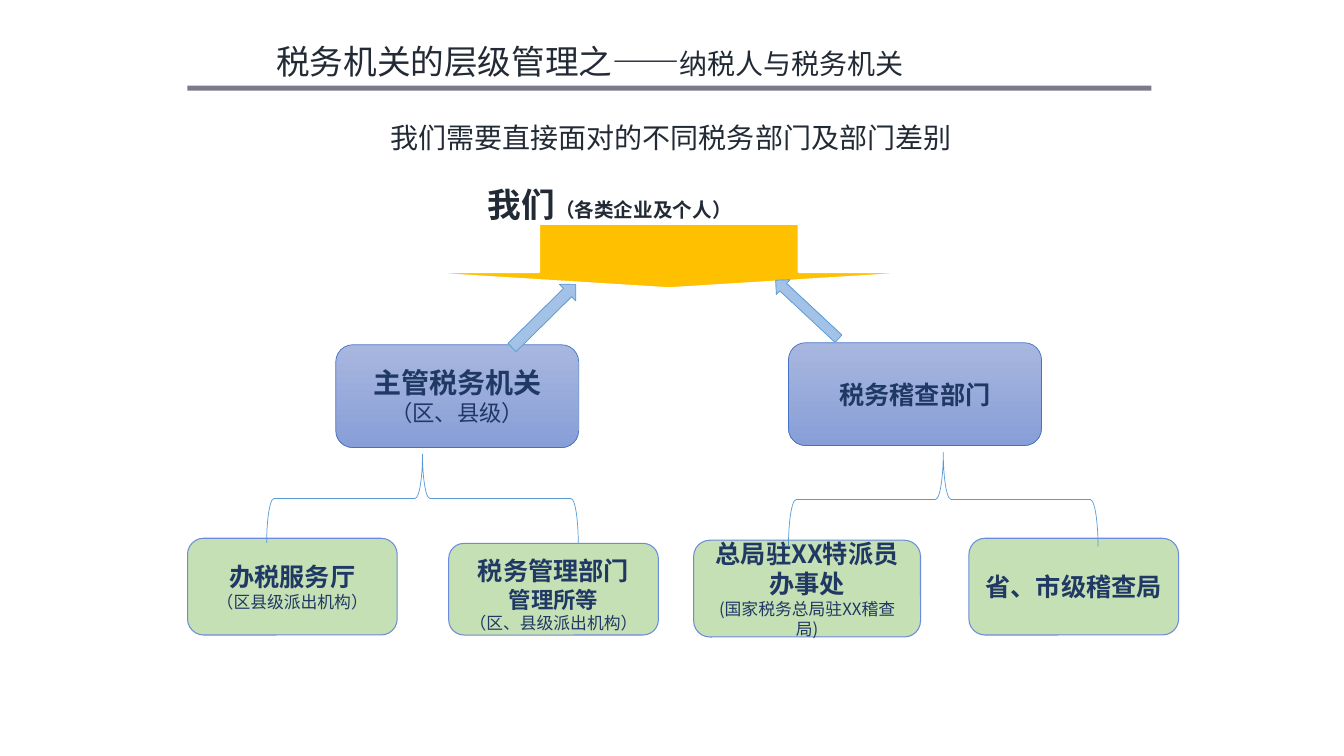
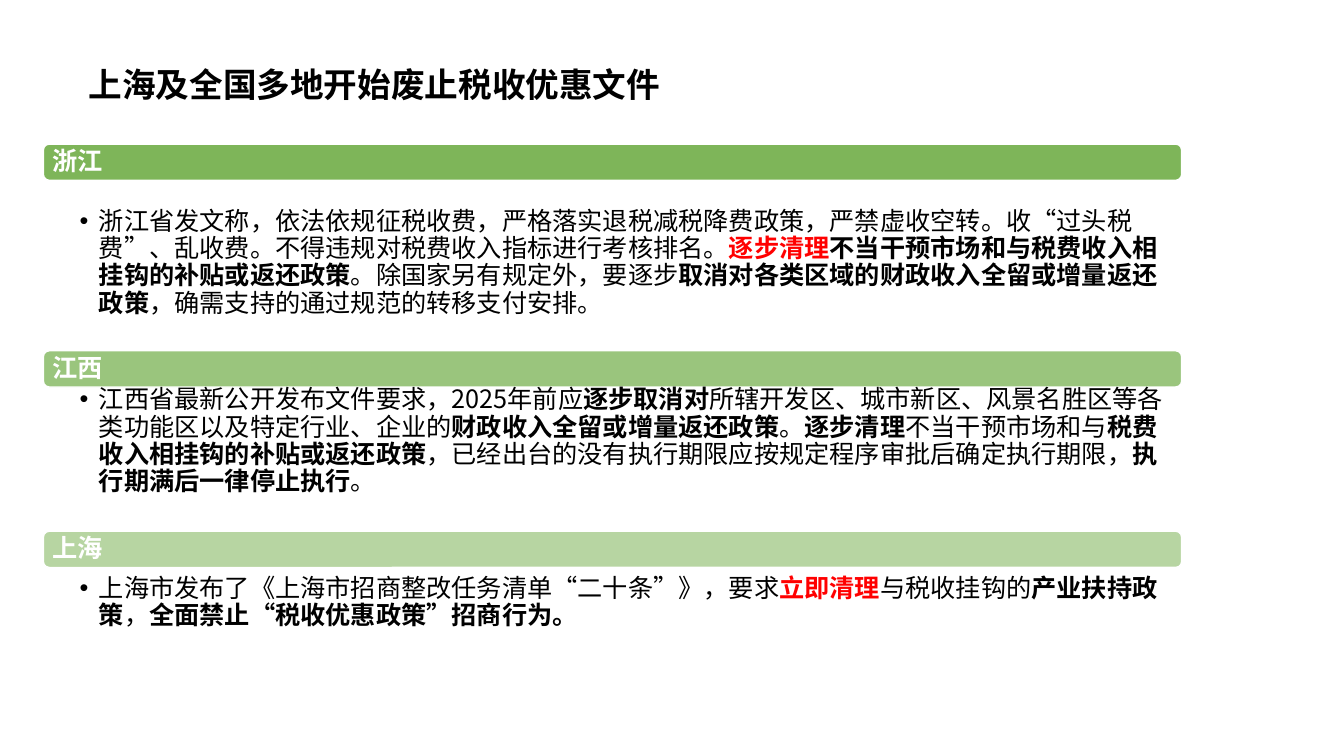
from lxml.etree import SubElement
from pptx import Presentation
from pptx.dml.color import RGBColor
from pptx.enum.shapes import MSO_SHAPE
from pptx.enum.text import MSO_ANCHOR, MSO_AUTO_SIZE, PP_ALIGN
from pptx.oxml.ns import qn
from pptx.util import Emu, Pt

# Shared look
PX = 9144  # 100 px to the inch
COLOURS = {
    "ink": "222A35", "black": "000000", "white": "FFFFFF", "alert": "FF0000",
    "navy": "203864", "rule": "7C7A88", "gold": "FFC000", "band": "70AD47",
    "office_top": "A8B7DF", "office_bottom": "889ED7", "office_line": "4472C4",
    "branch": "C5E0B4", "branch_line": "6B8BDB",
    "arrow_top": "B1CBE9", "arrow_bottom": "93B9E4", "brace": "5B9BD5",
}
FONT = "Noto Sans CJK SC"
SINGLE, REGION_SPACING = 1.0, 0.9
BOLD, ALERT = {"bold": True}, {"bold": True, "colour": "alert"}

# Slide 1: each paragraph is a list of (text, run overrides)
LEVELS_TITLE = [("税务机关的层级管理之——", {}), ("纳税人与税务机关", {"size": 20})]
LEVELS_HEADING = "我们需要直接面对的不同税务部门及部门差别"
LEVELS_US = [("我们", {"size": 24}), ("（各类企业及个人）", {"size": 14})]
# Boxes: left, top, width, height, text shift, lines of (text, size, bold)
OFFICES = [
    (333, 342, 241, 102, 0, [("主管税务机关", 20, True), ("（区、县级）", 16, False)]),
    (782, 340, 251, 102, 0, [("税务稽查部门", 18, True)]),
]
BRANCHES = [
    (186, 534, 208, 96, 0, [("办税服务厅", 18, True), ("（区县级派出机构）", 12, False)]),
    (445, 539, 208, 91, 5, [("税务管理部门", 18, True), ("管理所等", 16, True),
                            ("（区、县级派出机构）", 12, False)]),
    (688, 536, 225, 96, 0, [("总局驻XX特派员", 18, True), ("办事处", 18, True),
                            ("(国家税务总局驻XX稽查局)", 12, False)]),
    (961, 534, 208, 96, 0, [("省、市级稽查局", 18, True)]),
]
BRACES = [(375, 340, 88, 309), (889, 342, 93, 307)]
ARROWS = [(495, 302, 89, 23, 315.3), (758, 297, 85, 20, 223)]

# Slide 2: name, band top, band opacity, body top, body height, runs
REPEAL_TITLE = [("上海及全国多地开始废止税收优惠文件", {})]
REGIONS = [
    ("浙江", 143, 90, 204, 84, [
        ("浙江省发文称，依法依规征税收费，严格落实退税减税降费政策，严禁虚收空转。"
         "收“过头税费”、乱收费。不得违规对税费收入指标进行考核排名。", {}),
        ("逐步清理", ALERT),
        ("不当干预市场和与税费收入相挂钩的补贴或返还政策", BOLD),
        ("。除国家另有规定外，要逐步", {}),
        ("取消对各类区域的财政收入全留或增量返还政策", BOLD),
        ("，确需支持的通过规范的转移支付安排。", {}),
    ]),
    ("江西", 348, 70, 381, 92, [
        ("江西省最新公开发布文件要求，2025年前应", {}),
        ("逐步取消对", BOLD),
        ("所辖开发区、城市新区、风景名胜区等各类功能区以及特定行业、企业的", {}),
        ("财政收入全留或增量返还政策", BOLD),
        ("。", {}),
        ("逐步清理", BOLD),
        ("不当干预市场和与", {}),
        ("税费收入相挂钩的补贴或返还政策", BOLD),
        ("，已经出台的没有执行期限应按规定程序审批后确定执行期限，", {}),
        ("执行期满后一律停止执行", BOLD),
        ("。", {}),
    ]),
    ("上海", 527, 50, 568, 161, [
        ("上海市发布了《上海市招商整改任务清单“二十条”》，要求", {}),
        ("立即清理", ALERT),
        ("与税收挂钩的", {}),
        ("产业扶持政策", BOLD),
        ("，", {}),
        ("全面禁止“税收优惠政策”招商行为。", BOLD),
    ]),
]
BAND_LEFT, BAND_WIDTH, BAND_HEIGHT = 43, 1129, 36


def px(value):
    return Emu(value * PX)


def colour(name):
    return RGBColor.from_string(COLOURS[name])


def place(shape, left, top, width, height):
    shape.left, shape.top = px(left), px(top)
    shape.width, shape.height = px(width), px(height)


def set_font(font, size=None, colour_name=None, bold=None, name=None):
    if size:
        font.size = Pt(size)
    if bold is not None:
        font.bold = bold
    if colour_name:
        font.color.rgb = colour(colour_name)
    if name:
        font.name = name
        SubElement(font._rPr, qn("a:ea"), typeface=FONT)


def write(paragraph, runs, size, colour_name, bold=False, name=FONT, spacing=SINGLE,
          align=PP_ALIGN.LEFT):
    paragraph.alignment = align
    paragraph.line_spacing = spacing
    paragraph.space_before = Pt(0)
    set_font(paragraph.font, size, colour_name, bold, name)
    for text, override in runs:
        run = paragraph.add_run()
        run.text = text
        set_font(run.font, override.get("size"), override.get("colour"),
                 override.get("bold"))


def set_frame(shape, anchor, left=10, top=5, right=10, bottom=5):
    frame = shape.text_frame
    frame.word_wrap = True
    frame.auto_size = MSO_AUTO_SIZE.NONE
    frame.vertical_anchor = anchor
    frame.margin_left, frame.margin_top = px(left), px(top)
    frame.margin_right, frame.margin_bottom = px(right), px(bottom)
    return frame


def add_title(slide, box, runs, colour_name, bold):
    title = slide.shapes.title
    place(title, *box)
    frame = set_frame(title, MSO_ANCHOR.TOP)
    write(frame.paragraphs[0], runs, 24, colour_name, bold)


def add_shape(slide, kind, box, fills=(), line=None, line_width=0.5):
    shape = slide.shapes.add_shape(kind, *map(px, box))
    shape.shadow.inherit = False
    if not fills:
        shape.fill.background()
    elif len(fills) == 1:
        shape.fill.solid()
        shape.fill.fore_color.rgb = colour(fills[0])
    else:
        shape.fill.gradient()
        shape.fill.gradient_angle = 270
        for stop, name in zip(shape.fill.gradient_stops, fills):
            stop.color.rgb = colour(name)
    if line:
        shape.line.color.rgb = colour(line)
        shape.line.width = Pt(line_width)
    else:
        shape.line.fill.background()
    return shape


def add_unit(slide, unit, fills, line, line_width, name):
    *box, shift, lines = unit
    shape = add_shape(slide, MSO_SHAPE.ROUNDED_RECTANGLE, box, fills, line, line_width)
    frame = set_frame(shape, MSO_ANCHOR.MIDDLE, top=5 + shift, bottom=5 - shift)
    for index, (text, size, bold) in enumerate(lines):
        paragraph = frame.add_paragraph() if index else frame.paragraphs[0]
        write(paragraph, [(text, {})], size, "navy", bold, name, align=PP_ALIGN.CENTER)


def build_levels(presentation):
    slide = presentation.slides.add_slide(presentation.slide_layouts[5])
    add_shape(slide, MSO_SHAPE.RECTANGLE, (186, 85, 956, 5), ["rule"])
    add_title(slide, (264, 36, 753, 50), LEVELS_TITLE, "ink", False)

    # Heading and taxpayer line
    heading = slide.shapes.add_textbox(*map(px, (332, 98, 667, 123)))
    frame = set_frame(heading, MSO_ANCHOR.TOP)
    write(frame.paragraphs[0], [(LEVELS_HEADING, {})], 20, "ink", spacing=Pt(36),
          align=PP_ALIGN.CENTER)
    us = frame.add_paragraph()
    us._p.get_or_add_pPr().set("marL", str(px(142)))
    write(us, LEVELS_US, 24, "ink", True, spacing=Pt(50))

    # Offices and their branches
    for office in OFFICES:
        add_unit(slide, office, ["office_top", "office_bottom"], "office_line", 0.5, "Arial")
    for branch in BRANCHES:
        add_unit(slide, branch, ["branch"], "branch_line", 0.75, FONT)

    # Arrows and braces
    down_arrow = add_shape(slide, MSO_SHAPE.DOWN_ARROW, (406, 222, 515, 64),
                           ["gold"], "white", 1.5)
    down_arrow.adjustments[1] = 0.25
    for box in BRACES:
        add_shape(slide, MSO_SHAPE.LEFT_BRACE, box, line="brace").rotation = 90
    for *box, angle in ARROWS:
        arrow = add_shape(slide, MSO_SHAPE.RIGHT_ARROW, box,
                          ["arrow_top", "arrow_bottom"], "brace")
        arrow.rotation = angle


def build_repeal(presentation):
    slide = presentation.slides.add_slide(presentation.slide_layouts[4])
    add_title(slide, (78, 58, 707, 86), REPEAL_TITLE, "black", True)
    *bodies, spare = list(slide.placeholders)[1:]
    spare.element.getparent().remove(spare.element)

    for body, region in zip(bodies, REGIONS):
        name, band_top, opacity, body_top, body_height, runs = region
        # Band with the region's name
        band = add_shape(slide, MSO_SHAPE.ROUNDED_RECTANGLE,
                         (BAND_LEFT, band_top, BAND_WIDTH, BAND_HEIGHT),
                         ["band"], "white", 1)
        fill_colour = band.element.spPr.find(qn("a:solidFill"))[0]
        SubElement(fill_colour, qn("a:alpha"), val=str(opacity * 1000))
        frame = set_frame(band, MSO_ANCHOR.MIDDLE, left=7, top=0, bottom=0)
        write(frame.paragraphs[0], [(name, {})], 18, "white", True, spacing=REGION_SPACING)

        # Bulleted text, in front of its band
        band.element.addnext(body.element)
        place(body, BAND_LEFT, body_top, BAND_WIDTH, body_height)
        frame = set_frame(body, MSO_ANCHOR.TOP, left=36, top=3, right=14, bottom=3)
        paragraph = frame.paragraphs[0]
        properties = paragraph._p.get_or_add_pPr()
        properties.set("marL", str(px(19)))
        properties.set("indent", str(px(-19)))
        SubElement(properties, qn("a:buChar"), char="•")
        write(paragraph, runs, 18, "black", spacing=REGION_SPACING)


def main():
    presentation = Presentation()
    presentation.slide_width, presentation.slide_height = px(1333), px(750)
    build_levels(presentation)
    build_repeal(presentation)
    presentation.save("out.pptx")


if __name__ == "__main__":
    main()
